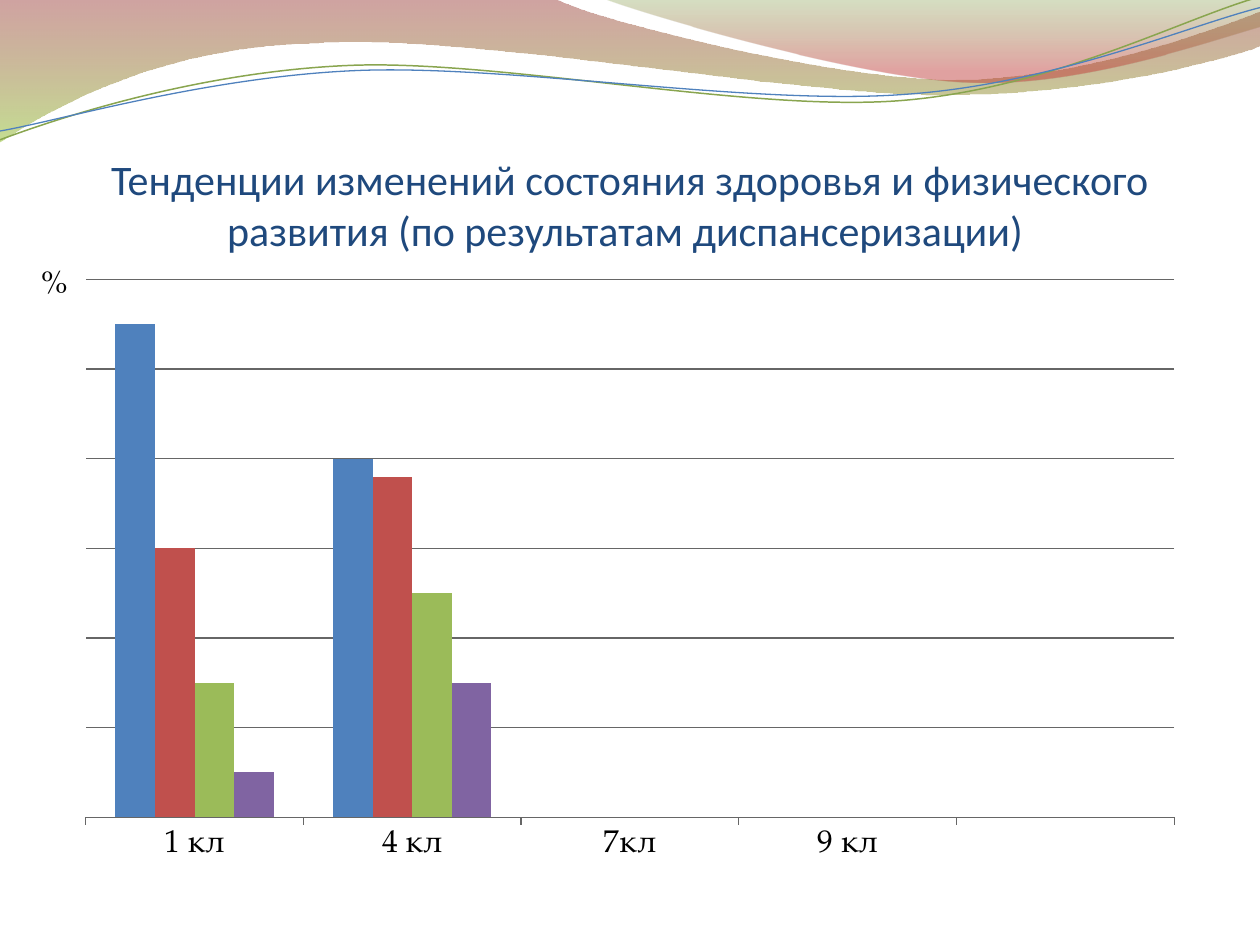
import math

import pptx
import pptx.chart.data
import pptx.dml.color
import pptx.enum.chart
import pptx.enum.text
import pptx.util
from lxml import etree
from pptx.util import Inches

CHART_FONT = "TeX Gyre Pagella"
DRAWING = "{http://schemas.openxmlformats.org/drawingml/2006/main}"
CHART = "{http://schemas.openxmlformats.org/drawingml/2006/chart}"
STRAND_ROTATION = 357.3


def color(value):
    """Turn a hex string into a colour."""
    return pptx.dml.color.RGBColor.from_string(value)


def inch_box(*lengths):
    """Turn left, top, width and height in inches into lengths."""
    return [Inches(length) for length in lengths]


def add_curve(shapes, box, segments, rotation=0, close=False):
    """Draw lines and cubic curves, given as slide points, inside a box."""
    left, top, width, height = box
    builder = shapes.build_freeform(left, top)
    builder.add_line_segments([(left + width, top + height)], close=False)
    shape = builder.convert_to_shape()
    path = next(shape.element.spPr.iter(DRAWING + "path"))
    for command in list(path):
        path.remove(command)
    cosine = math.cos(math.radians(-rotation))
    sine = math.sin(math.radians(-rotation))
    for number, segment in enumerate(segments):
        name = "moveTo" if number == 0 else "lnTo" if len(segment) == 2 else "cubicBezTo"
        command = etree.SubElement(path, DRAWING + name)
        for x, y in zip(segment[::2], segment[1::2]):
            across = Inches(x) - left - width / 2
            down = Inches(y) - top - height / 2
            etree.SubElement(
                command, DRAWING + "pt",
                x=str(round(width / 2 + across * cosine - down * sine)),
                y=str(round(height / 2 + across * sine + down * cosine)))
    if close:
        etree.SubElement(path, DRAWING + "close")
    shape.rotation = rotation
    shape.shadow.inherit = False
    return shape


def add_wave(shapes, box, segments, stops):
    """Draw a closed wave with a downward translucent gradient."""
    shape = add_curve(shapes, box, segments, close=True)
    shape.line.fill.background()
    shape.fill.gradient()
    shape.fill.gradient_angle = 270
    for stop, (position, value, _) in zip(shape.fill.gradient_stops, stops):
        stop.position = position
        stop.color.rgb = color(value)
    for node, (_, _, opacity) in zip(shape.element.spPr.iter(DRAWING + "srgbClr"), stops):
        etree.SubElement(node, DRAWING + "alpha", val=str(opacity * 1000))


def add_strand(shapes, box, segments, value, width):
    """Draw an open, slightly turned curved line."""
    shape = add_curve(shapes, box, segments, STRAND_ROTATION)
    shape.fill.background()
    shape.line.color.rgb = color(value)
    shape.line.width = pptx.util.Pt(width)


def add_header(slide):
    """Place the two waves and the pair of strands along the top."""
    add_wave(slide.shapes, inch_box(-0.01, -0.01, 10.02, 1.14), [
        (0, 0), (4.4, -0.01), (4.76, 0.17, 6.64, 0.63, 7.58, 0.63),
        (8.53, 0.63, 9.58, 0.26, 10, 0.09), (10.01, 0.36),
        (9.83, 0.44, 8.7, 0.76, 7.46, 0.75), (6.22, 0.75, 3.82, 0.28, 2.57, 0.34),
        (1.29, 0.36, 0.46, 0.83, -0.01, 1.13), (0, 0),
    ], [(0, "973330", 45), (1, "95C238", 55)])
    add_wave(slide.shapes, inch_box(4.79, -0.01, 5.21, 0.7), [
        (4.79, -0.01), (5.09, 0.11, 6.82, 0.62, 7.69, 0.65),
        (8.56, 0.69, 9.61, 0.32, 10, 0.21), (10, 0), (4.79, -0.01),
    ], [(0, "769537", 30), (0.8, "BE3330", 45)])
    strands = slide.shapes.add_group_shape().shapes
    add_strand(strands, inch_box(-0.02, 0.22, 10.02, 0.71), [
        (0, 1.11), (0.48, 0.93, 1.58, 0.57, 2.77, 0.52),
        (3.95, 0.47, 5.93, 0.89, 7.13, 0.8), (8.33, 0.71, 9.38, 0.15, 9.98, -0.02),
    ], "89A54F", 0.85)
    add_strand(strands, inch_box(-0.02, 0.3, 10.03, 0.58), [
        (0, 1.04), (0.47, 0.96, 1.64, 0.61, 2.83, 0.56),
        (4.03, 0.51, 5.97, 0.84, 7.17, 0.75), (8.36, 0.67, 9.41, 0.21, 10, 0.06),
    ], "4F81BD", 0.75)


def style_font(font, name, size, value):
    """Set the face, size and colour of a font."""
    font.name = name
    font.size = pptx.util.Pt(size)
    font.color.rgb = color(value)


def add_title(slide, box):
    """Move and format the title placeholder."""
    title = slide.shapes.title
    title.left, title.top, title.width, title.height = box
    frame = title.text_frame
    frame.text = ("Тенденции изменений состояния здоровья и физического развития "
                  "(по результатам диспансеризации) ")
    frame.word_wrap = True
    frame.auto_size = pptx.enum.text.MSO_AUTO_SIZE.NONE
    frame.vertical_anchor = pptx.enum.text.MSO_ANCHOR.BOTTOM
    frame.margin_left = frame.margin_right = frame.margin_bottom = 0
    frame.margin_top = Inches(0.05)
    paragraph = frame.paragraphs[0]
    paragraph.alignment = pptx.enum.text.PP_ALIGN.CENTER
    style_font(paragraph.font, "Calibri", 24, "1F497D")


def set_plot_area(chart, x, y, width, height):
    """Fix the inner plot area as fractions of the chart."""
    plot_area = chart.element.chart.plotArea
    for old in plot_area.findall(CHART + "layout"):
        plot_area.remove(old)
    layout = etree.Element(CHART + "layout")
    manual = etree.SubElement(layout, CHART + "manualLayout")
    settings = {"layoutTarget": "inner", "xMode": "edge", "yMode": "edge",
                "x": x, "y": y, "w": width, "h": height}
    for name, value in settings.items():
        etree.SubElement(manual, CHART + name, val=str(value))
    plot_area.insert(0, layout)


def add_health_chart(slide, box):
    """Add the clustered columns by school year."""
    series_rows = [("4F81BD", 5.5, 4), ("C0504D", 3, 3.8),
                   ("9BBB59", 1.5, 2.5), ("8064A2", 0.5, 1.5)]
    data = pptx.chart.data.CategoryChartData()
    data.categories = ["1 кл", "4 кл", "7кл", "9 кл", ""]
    for number, (_, *values) in enumerate(series_rows, 1):
        data.add_series(f"Series {number}", values + [None] * 3)
    chart = slide.shapes.add_chart(
        pptx.enum.chart.XL_CHART_TYPE.COLUMN_CLUSTERED, *box, data).chart
    for point in list(chart.element.iter(CHART + "pt")):
        if not point.findtext(CHART + "v"):
            point.getparent().remove(point)
    chart.has_legend = False
    chart.has_title = False
    style_font(chart.font, CHART_FONT, 18, "000000")
    set_plot_area(chart, 0.02, 0.02, 0.96, 0.89)

    plot = chart.plots[0]
    plot.gap_width = 150
    plot.overlap = 0
    plot.vary_by_categories = False
    for series, (value, *_) in zip(plot.series, series_rows):
        series.format.fill.solid()
        series.format.fill.fore_color.rgb = color(value)

    value_axis = chart.value_axis
    value_axis.minimum_scale, value_axis.maximum_scale, value_axis.major_unit = 0, 6, 1
    value_axis.has_major_gridlines = True
    value_axis.visible = False
    category_axis = chart.category_axis
    category_axis.major_tick_mark = pptx.enum.chart.XL_TICK_MARK.OUTSIDE
    for line in (value_axis.major_gridlines.format.line, category_axis.format.line):
        line.color.rgb = color("666666")
        line.width = pptx.util.Pt(0.75)


def add_unit_label(slide, box):
    """Add the percent sign beside the chart."""
    frame = slide.shapes.add_textbox(*box).text_frame
    frame.word_wrap = True
    frame.auto_size = pptx.enum.text.MSO_AUTO_SIZE.SHAPE_TO_FIT_TEXT
    frame.text = "%"
    style_font(frame.paragraphs[0].font, CHART_FONT, 18, "000000")


def main():
    """Build and save the slide."""
    presentation = pptx.Presentation()
    presentation.slide_width, presentation.slide_height = Inches(10), Inches(7.5)
    slide = presentation.slides.add_slide(presentation.slide_layouts[5])
    add_header(slide)
    slide.shapes.element.append(slide.shapes.title.element)
    add_title(slide, inch_box(0.5, 0.77, 9, 1.25))
    add_health_chart(slide, inch_box(0.5, 2.12, 9, 4.8))
    add_unit_label(slide, inch_box(0.23, 2.03, 0.47, 0.4))
    presentation.save("out.pptx")


if __name__ == "__main__":
    main()
